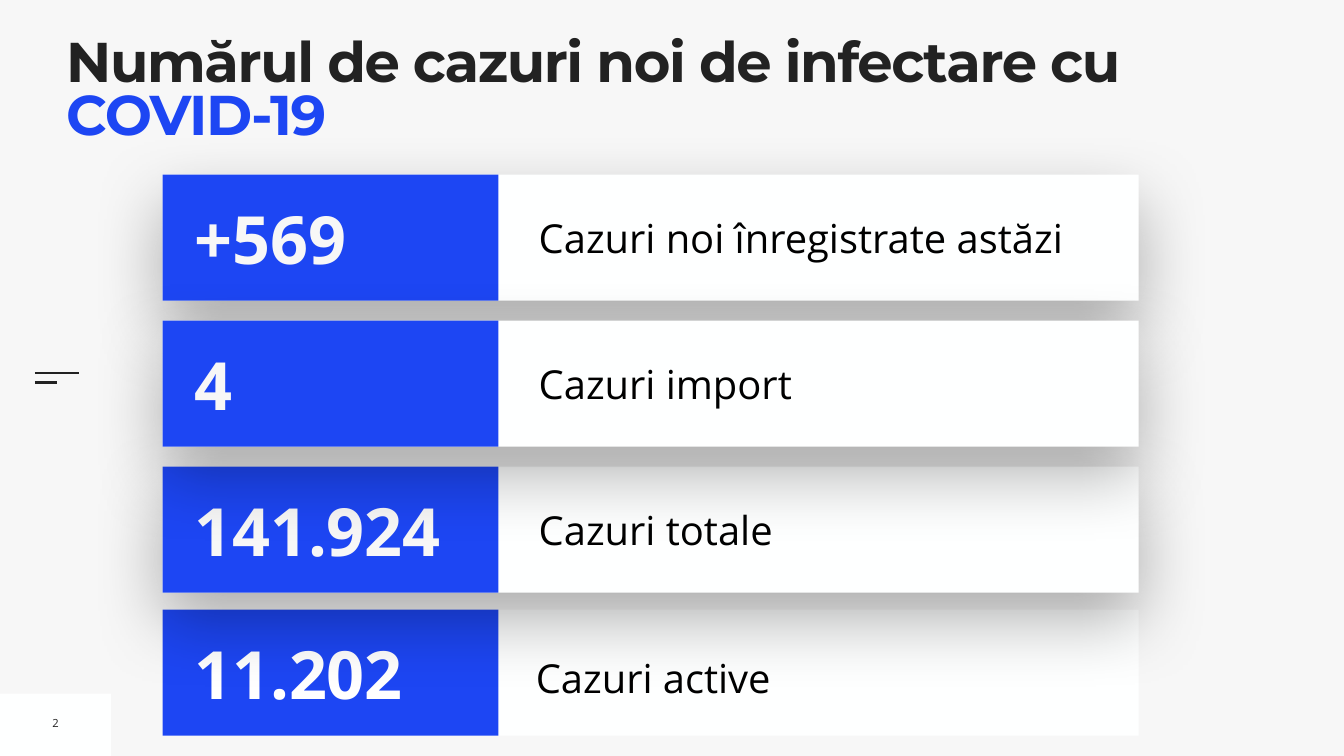
import pptx
import pptx.dml.color
import pptx.enum.shapes
import pptx.enum.text
import pptx.oxml
import pptx.oxml.ns
import pptx.util

Pt = pptx.util.Pt
ANCHOR = pptx.enum.text.MSO_ANCHOR
ALIGN = pptx.enum.text.PP_ALIGN
COLOURS = {"back": "F7F7F7", "card": "FEFFFF", "blue": "1D46F3",
           "ink": "222222", "black": "000000", "white": "FFFFFF"}
SHADOW = (
    '<a:effectLst %s><a:outerShdw blurRad="%d" dist="%d" dir="5400000" '
    'rotWithShape="0"><a:srgbClr val="%s"><a:alpha val="30000"/></a:srgbClr>'
    '</a:outerShdw></a:effectLst>'
    % (pptx.oxml.ns.nsdecls("a"), Pt(100), Pt(40), COLOURS["black"]))


def colour(name):
    return pptx.dml.color.RGBColor.from_string(COLOURS[name])


class Painter:
    """Holds the fonts and the current page."""
    heading_font = "Montserrat"
    body_font = "Open Sans"

    def __init__(self, page):
        self.page = page

    def background(self, name):
        fill = self.page.background.fill
        fill.solid()
        fill.fore_color.rgb = colour(name)

    def style(self, span, size, name, bold=False, font=None):
        span.font.name = font or self.body_font
        span.font.size = Pt(size)
        span.font.bold = bold
        span.font.color.rgb = colour(name)

    def rect(self, left, top, width, height, name, shadow=False, parent=None):
        box = (parent or self.page).shapes.add_shape(
            pptx.enum.shapes.MSO_SHAPE.RECTANGLE,
            Pt(left), Pt(top), Pt(width), Pt(height))
        box.fill.solid()
        box.fill.fore_color.rgb = colour(name)
        box.line.fill.background()
        box.shadow.inherit = False
        if shadow:
            props = box._element.spPr
            props.remove(props.find(pptx.oxml.ns.qn("a:effectLst")))
            props.append(pptx.oxml.parse_xml(SHADOW))

    def line(self, left, top, width):
        rule = self.page.shapes.add_connector(
            pptx.enum.shapes.MSO_CONNECTOR.STRAIGHT,
            Pt(left), Pt(top), Pt(left + width), Pt(top))
        rule.line.width = Pt(3)
        rule.line.color.rgb = colour("ink")
        rule._element.spPr.append(pptx.oxml.parse_xml(
            "<a:effectLst %s/>" % pptx.oxml.ns.nsdecls("a")))

    def text(self, left, top, width, height, words, size, name, bold=False,
             inset=7.2, wrap=True, parent=None):
        box = (parent or self.page).shapes.add_textbox(
            Pt(left), Pt(top), Pt(width), Pt(height))
        frame = box.text_frame
        frame.word_wrap = wrap
        frame.vertical_anchor = ANCHOR.MIDDLE
        frame.margin_left = frame.margin_right = Pt(inset)
        frame.margin_top = frame.margin_bottom = Pt(inset)
        frame.text = words
        para = frame.paragraphs[0]
        self.style(para.runs[0], size, name, bold)
        return para

    def title(self, left, top, width, height, parts):
        box = self.page.shapes.title
        box.left, box.top = Pt(left), Pt(top)
        box.width, box.height = Pt(width), Pt(height)
        frame = box.text_frame
        frame.word_wrap = True
        frame.auto_size = pptx.enum.text.MSO_AUTO_SIZE.NONE
        frame.vertical_anchor = ANCHOR.TOP
        frame.margin_left = frame.margin_right = 0
        frame.margin_top = frame.margin_bottom = 0
        para = frame.paragraphs[0]
        para.alignment = ALIGN.LEFT
        para.line_spacing = 0.8
        for words, name in parts:
            span = para.add_run()
            span.text = words
            self.style(span, 80, name, True, self.heading_font)
            span._r.get_or_add_rPr().set("spc", "-200")

    def card(self, top, number, label, last=False):
        """A white bar with a blue number block and a label."""
        group = self.page.shapes.add_group_shape()
        self.rect(232.5, top, 1394, 180, "card", not last, group)
        if last:
            para = self.text(765.5, top + 42, 834, 90, label, 57, "black",
                             inset=0, parent=group)
            para.line_spacing = 1.3
            para.space_before = Pt(20)
        else:
            self.text(762.5, top + 48, 847, 84, label, 57, "black", parent=group)
        self.rect(232.5, top, 479.5, 180, "blue", parent=group)
        self.text(270.5, top + 25, 434, 130, number, 95,
                  "white" if last else "back", True, parent=group)


def main():
    deck = pptx.Presentation()
    deck.slide_width, deck.slide_height = Pt(1920), Pt(1080)
    painter = Painter(deck.slides.add_slide(deck.slide_layouts[5]))
    painter.background("back")

    # Page number corner and side mark
    painter.rect(0, 991, 158.5, 89, "card")
    painter.line(50, 533.5, 63)
    painter.line(50, 546.5, 31.5)
    number = painter.text(67, 1014.5, 24.5, 36.5, "2", 16, "ink", wrap=False)
    number.alignment = ALIGN.CENTER

    # Title
    painter.title(94.5, 56, 1723.5, 114, [
        ("Numărul de cazuri noi de infectare cu ", "ink"), ("COVID-19", "blue")])

    # Cards, from back to front
    painter.card(871, "11.202", "Cazuri active", last=True)
    for top, count, label in [
            (666.5, "141.924", "Cazuri totale"),
            (249.5, "+569", "Cazuri noi înregistrate astăzi"),
            (458, "4", "Cazuri import")]:
        painter.card(top, count, label)

    deck.save("out.pptx")


if __name__ == "__main__":
    main()
